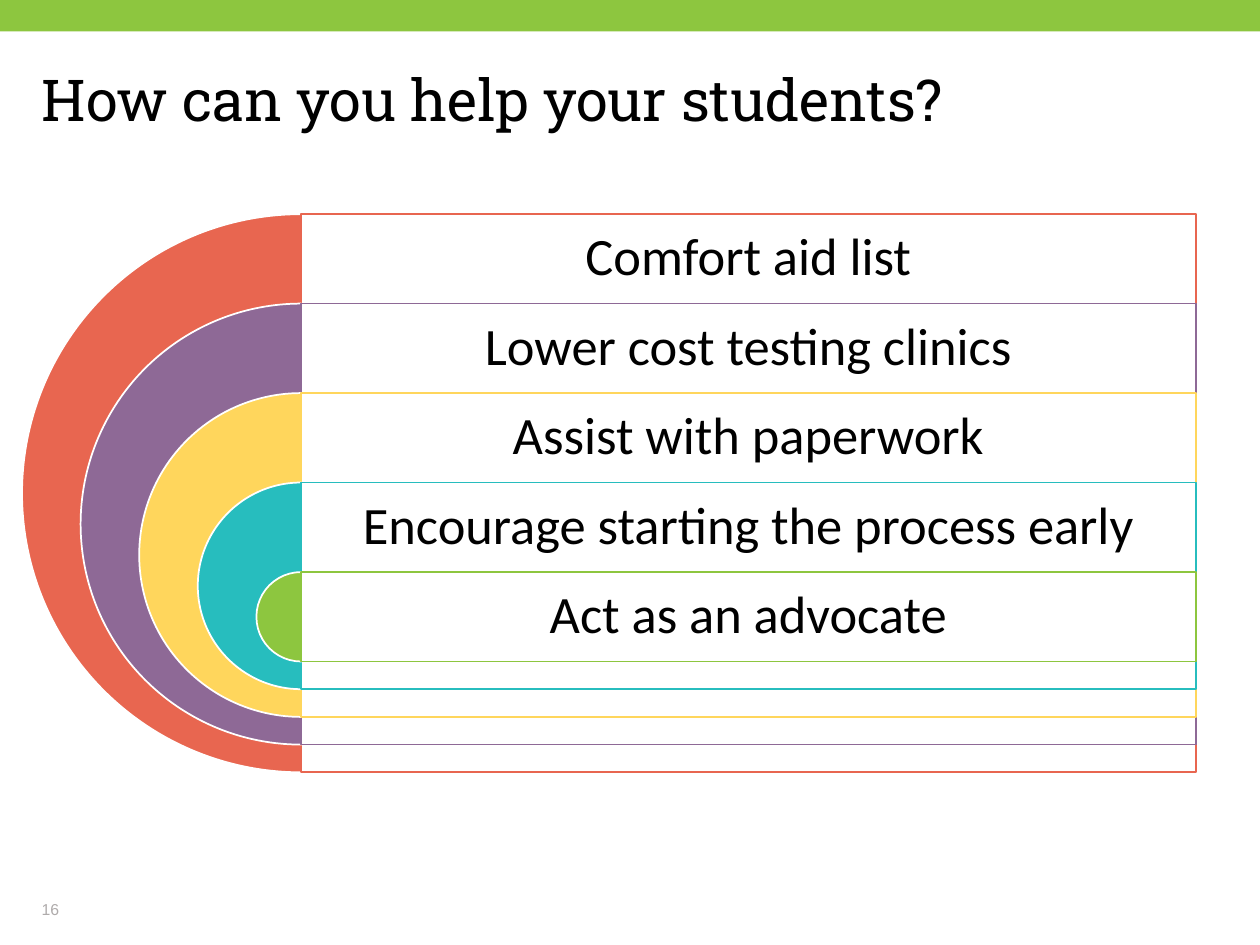
from dataclasses import dataclass

from lxml.etree import SubElement
from pptx import Presentation
from pptx.dml.color import RGBColor
from pptx.enum.shapes import MSO_SHAPE
from pptx.enum.text import MSO_ANCHOR, PP_ALIGN
from pptx.oxml.ns import qn
from pptx.util import Inches, Pt


@dataclass(frozen=True)
class Theme:
    white: str = "FFFFFF"
    black: str = "000000"
    grey: str = "AFABAB"
    green: str = "8DC63F"
    coral: str = "E86650"
    purple: str = "8E6996"
    yellow: str = "FFD65C"
    teal: str = "27BDBE"
    title_font: str = "Roboto Slab"
    body_font: str = "Calibri"
    number_font: str = "Arial"
    title_size: int = 33
    body_size: int = 30
    number_size: int = 9


THEME = Theme()

LAYERS = [
    ("Comfort aid list", THEME.coral),
    ("Lower cost testing clinics", THEME.purple),
    ("Assist with paperwork", THEME.yellow),
    ("Encourage starting the process early", THEME.teal),
    ("Act as an advocate", THEME.green),
]
CENTER_X, TOP = 2.39, 1.7
PANEL_WIDTH, ROW_HEIGHT = 7.1, 0.71
DIAMETER_STEP = 0.93


def add_filled(shapes, kind, box, fill, line=None):
    sp = shapes.add_shape(kind, *map(Inches, box))
    sp.shadow.inherit = False
    sp.fill.solid()
    sp.fill.fore_color.rgb = RGBColor.from_string(fill)
    if line:
        sp.line.color.rgb = RGBColor.from_string(line)
        sp.line.width = Pt(1)
    else:
        sp.line.fill.background()
    return sp


def set_opacity(sp, percent):
    color = sp.fill._xPr.find(qn("a:solidFill"))[0]
    SubElement(color, qn("a:alpha")).set("val", str(percent * 1000))


def write_text(sp, text, font, size, color, anchor, inset=0, align=PP_ALIGN.LEFT, spacing=1.0):
    tf = sp.text_frame
    tf.word_wrap = True
    tf.vertical_anchor = anchor
    tf.margin_left = tf.margin_right = tf.margin_top = tf.margin_bottom = Inches(inset)
    p = tf.paragraphs[0]
    p.text = text
    p.alignment = align
    p.line_spacing = spacing
    p.font.name = font
    p.font.size = Pt(size)
    p.font.bold = False
    p.font.color.rgb = RGBColor.from_string(color)


def add_title(s, text):
    title = s.shapes.title
    title.left, title.top, title.width, title.height = map(Inches, (0.33, 0.57, 9.31, 1.27))
    write_text(title, text, THEME.title_font, THEME.title_size, THEME.black,
               MSO_ANCHOR.TOP, spacing=0.9)


def add_layer(shapes, index, text, color):
    """Add one half disc with its outlined panel and label."""
    top = TOP + index * ROW_HEIGHT
    diameter = ROW_HEIGHT + (len(LAYERS) - 1 - index) * DIAMETER_STEP
    pie = add_filled(shapes, MSO_SHAPE.PIE,
                     (CENTER_X - diameter / 2, top, diameter, diameter), color, THEME.white)
    pie.adjustments[0], pie.adjustments[1] = 54, 162  # 90 to 270 degrees
    panel = add_filled(shapes, MSO_SHAPE.RECTANGLE,
                       (CENTER_X, top, PANEL_WIDTH, diameter), THEME.white, color)
    set_opacity(panel, 90)
    label = shapes.add_textbox(*map(Inches, (CENTER_X, top, PANEL_WIDTH, ROW_HEIGHT)))
    write_text(label, text, THEME.body_font, THEME.body_size, THEME.black,
               MSO_ANCHOR.MIDDLE, 0.12, PP_ALIGN.CENTER, 0.9)


def add_page_number(s, number):
    box = s.shapes.add_textbox(*map(Inches, (0.33, 7.05, 2.25, 0.24)))
    write_text(box, number, THEME.number_font, THEME.number_size, THEME.grey, MSO_ANCHOR.BOTTOM)


def main():
    prs = Presentation()
    prs.slide_width, prs.slide_height = Inches(10), Inches(7.5)
    s = prs.slides.add_slide(prs.slide_layouts[5])
    add_filled(s.shapes, MSO_SHAPE.RECTANGLE, (0, 0, 10, 0.25), THEME.green)
    add_title(s, "How can you help your students?")
    diagram = s.shapes.add_group_shape()
    for index, (text, color) in enumerate(LAYERS):
        add_layer(diagram.shapes, index, text, color)
    add_page_number(s, "16")
    prs.save("out.pptx")


if __name__ == "__main__":
    main()
